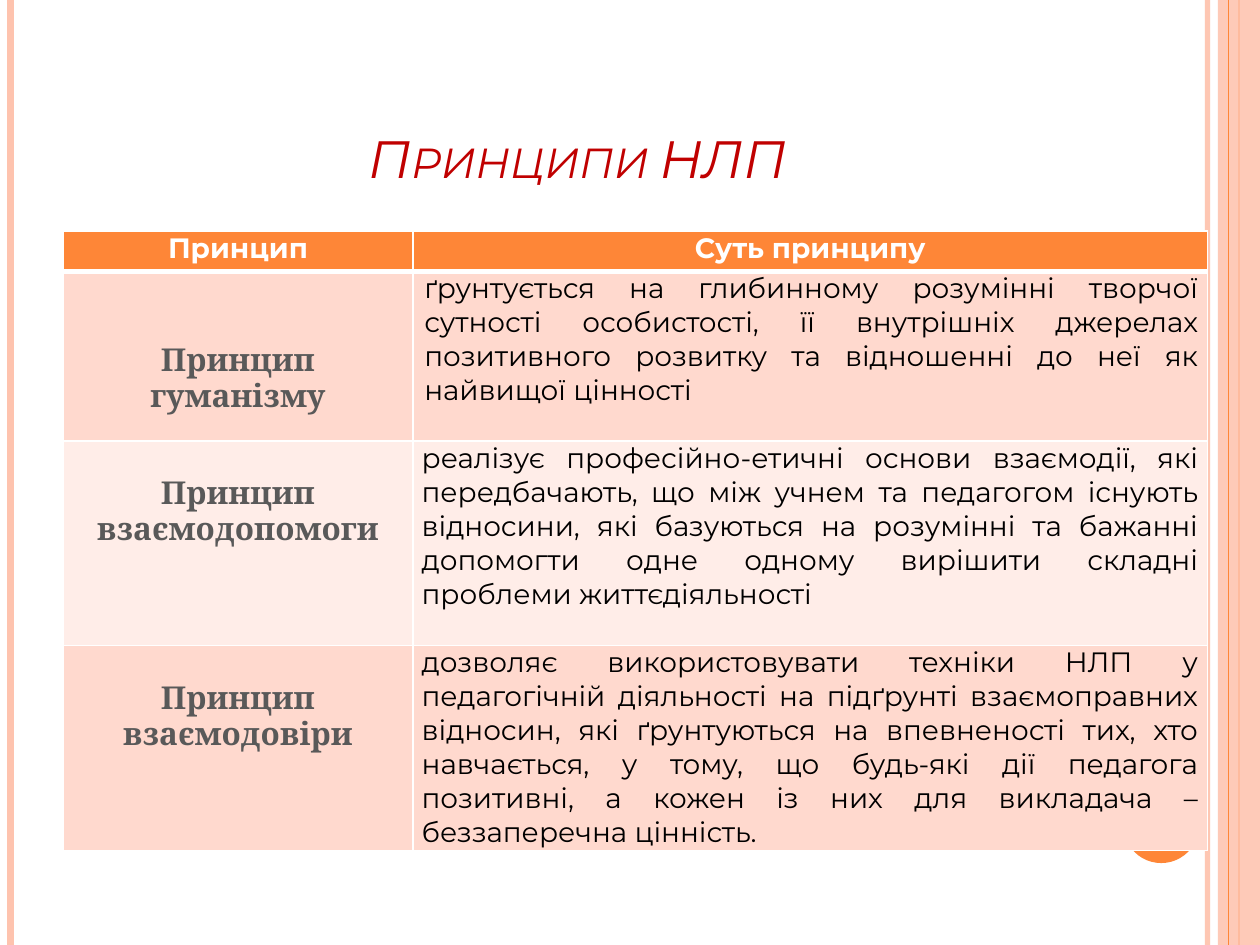
from dataclasses import dataclass

from pptx import Presentation
from pptx.dml.color import RGBColor
from pptx.enum.shapes import MSO_CONNECTOR, MSO_SHAPE
from pptx.enum.text import MSO_ANCHOR, PP_ALIGN
from pptx.oxml.ns import qn
from pptx.util import Pt
from lxml.etree import SubElement, Element

ORANGE = RGBColor(0xFE, 0x86, 0x37)
PEACH = RGBColor(0xFE, 0xC3, 0xAE)
BAND_DARK = RGBColor(0xFF, 0xD9, 0xCE)
BAND_LIGHT = RGBColor(0xFF, 0xED, 0xE8)
RED = RGBColor(0xC0, 0x00, 0x00)
GREY = RGBColor(0x59, 0x59, 0x59)
BLACK = RGBColor(0, 0, 0)
WHITE = RGBColor(0xFF, 0xFF, 0xFF)

SANS, SERIF = "Montserrat", "Cambria"
PAGE_WIDTH, PAGE_HEIGHT = 720, 540
HEADER_HEIGHT = 23
COLUMN_WIDTHS = (200, 454)
CELL_INSET = 5


@dataclass(frozen=True)
class Stripe:
    x: float
    width: float
    color: RGBColor
    opacity: int = 100


@dataclass(frozen=True)
class Principle:
    name: str
    essence: str
    height: float
    name_drop: float
    fill: RGBColor
    essence_indent: float = 0


@dataclass(frozen=True)
class TextStyle:
    font: str
    size: float
    color: RGBColor
    bold: bool
    align: PP_ALIGN


HEADER_STYLE = TextStyle(SANS, 16, WHITE, True, PP_ALIGN.CENTER)
NAME_STYLE = TextStyle(SERIF, 18, GREY, True, PP_ALIGN.CENTER)
ESSENCE_STYLE = TextStyle(SANS, 16, BLACK, False, PP_ALIGN.JUSTIFY)

STRIPES = (
    Stripe(690, 3, PEACH, 93),
    Stripe(6, 4.5, PEACH),
    Stripe(708, 1.5, ORANGE),
)
STRIPE_OVER_BAND = Stripe(702, 0.75, ORANGE)

PRINCIPLES = (
    Principle(
        "Принцип гуманізму",
        "ґрунтується на глибинному розумінні творчої сутності особистості, "
        "її внутрішніх джерелах позитивного розвитку та відношенні до неї "
        "як найвищої цінності",
        97, 41, BAND_DARK, 1.5,
    ),
    Principle(
        "Принцип взаємодопомоги",
        "реалізує професійно-етичні основи взаємодії, які передбачають, що "
        "між учнем та педагогом існують відносини, які базуються на розумінні "
        "та бажанні допомогти одне одному вирішити складні проблеми "
        "життєдіяльності",
        117, 20, BAND_LIGHT,
    ),
    Principle(
        "Принцип взаємодовіри",
        "дозволяє використовувати техніки НЛП у педагогічній діяльності на "
        "підґрунті взаємоправних відносин, які ґрунтуються на впевненості тих, "
        "хто навчається, у тому, що будь-які дії педагога позитивні, а кожен "
        "із них для викладача – беззаперечна цінність.",
        117, 20, BAND_DARK,
    ),
)


def set_opacity(properties, percent: int) -> None:
    """Add an alpha value to the first solid colour below the element."""
    color = next(properties.iter(qn("a:srgbClr")))
    SubElement(color, qn("a:alpha"), val=str(percent * 1000))


def add_stripe(page, stripe: Stripe) -> None:
    line = page.shapes.add_connector(
        MSO_CONNECTOR.STRAIGHT, Pt(stripe.x), 0, Pt(stripe.x), Pt(PAGE_HEIGHT))
    line.line.color.rgb = stripe.color
    line.line.width = Pt(stripe.width)
    properties = line._element.spPr
    if stripe.opacity < 100:
        set_opacity(properties, stripe.opacity)
    SubElement(properties, qn("a:effectLst"))


def add_plain_shape(page, kind, left, top, width, height, color):
    shape = page.shapes.add_shape(kind, Pt(left), Pt(top), Pt(width), Pt(height))
    shape.shadow.inherit = False
    shape.fill.solid()
    shape.fill.fore_color.rgb = color
    shape.line.fill.background()
    return shape


def set_borders(cell, bottom_width: float) -> None:
    """Give the cell white borders, 1 pt on all sides but the bottom."""
    widths = {"a:lnL": 1, "a:lnR": 1, "a:lnT": 1, "a:lnB": bottom_width}
    properties = cell._tc.get_or_add_tcPr()
    for place, (tag, width) in enumerate(widths.items()):
        border = Element(qn(tag), w=str(Pt(width)))
        fill = SubElement(border, qn("a:solidFill"))
        SubElement(fill, qn("a:srgbClr"), val=str(WHITE))
        properties.insert(place, border)


def fill_cell(cell, text: str, style: TextStyle, fill: RGBColor,
              drop: float = 0, indent: float = 0, bottom_border: float = 1) -> None:
    cell.fill.solid()
    cell.fill.fore_color.rgb = fill
    cell.margin_left, cell.margin_right = Pt(CELL_INSET + indent), Pt(CELL_INSET)
    cell.margin_top, cell.margin_bottom = Pt(drop), 0
    para = cell.text_frame.paragraphs[0]
    para.alignment = style.align
    span = para.add_run()
    span.text = text
    span.font.name = style.font
    span.font.size = Pt(style.size)
    span.font.bold = style.bold
    span.font.color.rgb = style.color
    set_borders(cell, bottom_border)


def add_title(page, text: str) -> None:
    title = page.shapes.title
    title.left, title.top, title.width, title.height = Pt(36), Pt(21.6), Pt(588), Pt(90)
    title.text_frame.vertical_anchor = MSO_ANCHOR.BOTTOM
    para = title.text_frame.paragraphs[0]
    para.alignment = PP_ALIGN.CENTER
    span = para.add_run()
    span.text = text
    span.font.name = SANS
    span.font.size = Pt(30)
    span.font.italic = True
    span.font.color.rgb = RED
    span._r.get_or_add_rPr().set("cap", "small")


def add_principles_table(page) -> None:
    height = HEADER_HEIGHT + sum(principle.height for principle in PRINCIPLES)
    table = page.shapes.add_table(
        len(PRINCIPLES) + 1, len(COLUMN_WIDTHS),
        Pt(36), Pt(132), Pt(sum(COLUMN_WIDTHS)), Pt(height)).table
    for column, width in zip(table.columns, COLUMN_WIDTHS):
        column.width = Pt(width)
    table.rows[0].height = Pt(HEADER_HEIGHT)
    for column, heading in enumerate(("Принцип", "Суть принципу")):
        fill_cell(table.cell(0, column), heading, HEADER_STYLE, ORANGE, bottom_border=3)
    for row, principle in enumerate(PRINCIPLES, start=1):
        table.rows[row].height = Pt(principle.height)
        fill_cell(table.cell(row, 0), principle.name, NAME_STYLE,
                  principle.fill, drop=principle.name_drop)
        fill_cell(table.cell(row, 1), principle.essence, ESSENCE_STYLE,
                  principle.fill, indent=principle.essence_indent)


def main() -> None:
    deck = Presentation()
    deck.slide_width, deck.slide_height = Pt(PAGE_WIDTH), Pt(PAGE_HEIGHT)
    page = deck.slides.add_slide(deck.slide_layouts[5])
    for stripe in STRIPES:
        add_stripe(page, stripe)
    band = add_plain_shape(page, MSO_SHAPE.RECTANGLE, 696, 0, 24, PAGE_HEIGHT, PEACH)
    set_opacity(band._element.spPr, 87)
    add_stripe(page, STRIPE_OVER_BAND)
    add_plain_shape(page, MSO_SHAPE.OVAL, 642, 450, 43.2, 43.2, ORANGE)
    add_title(page, "Принципи НЛП")
    add_principles_table(page)
    deck.save("out.pptx")


if __name__ == "__main__":
    main()
